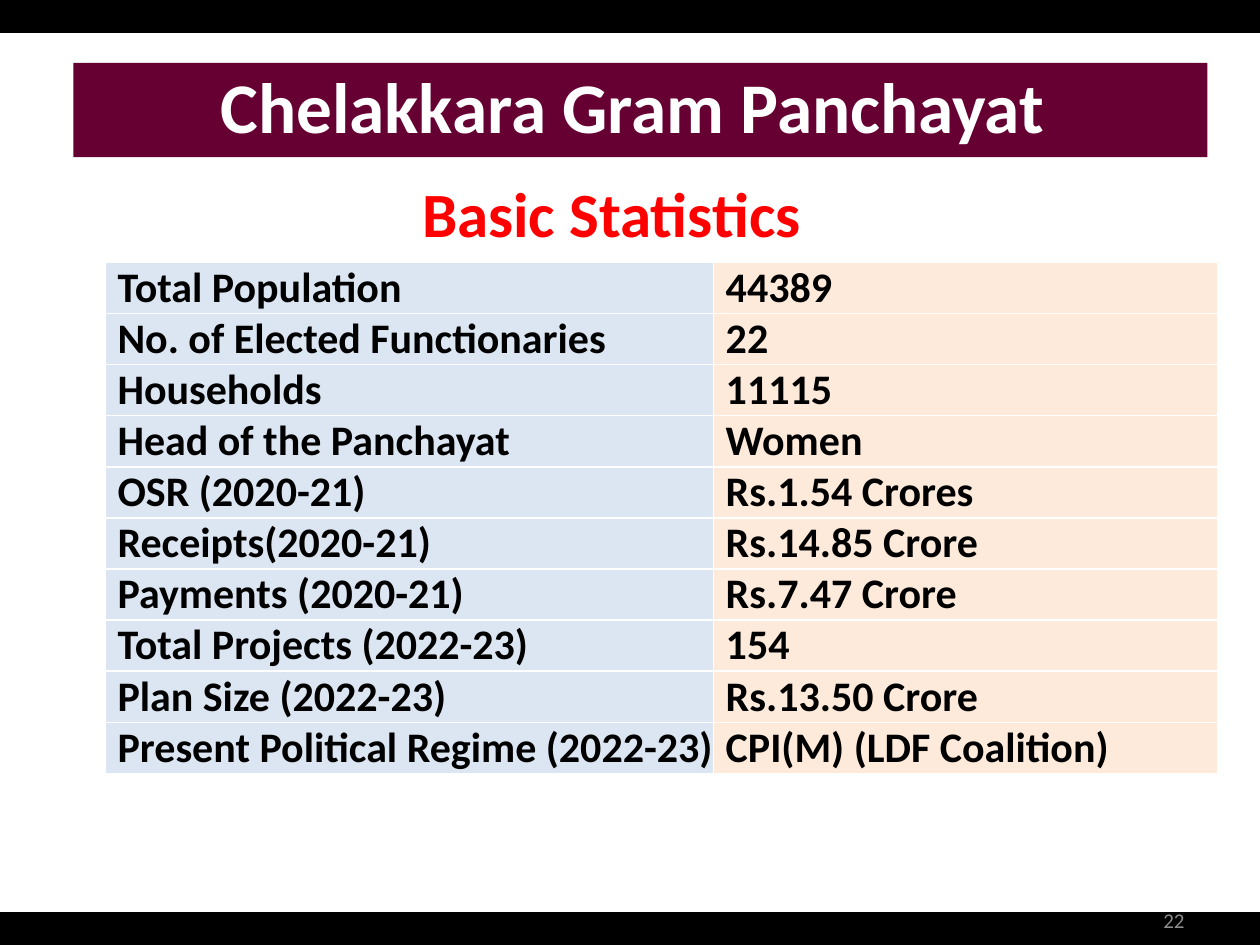
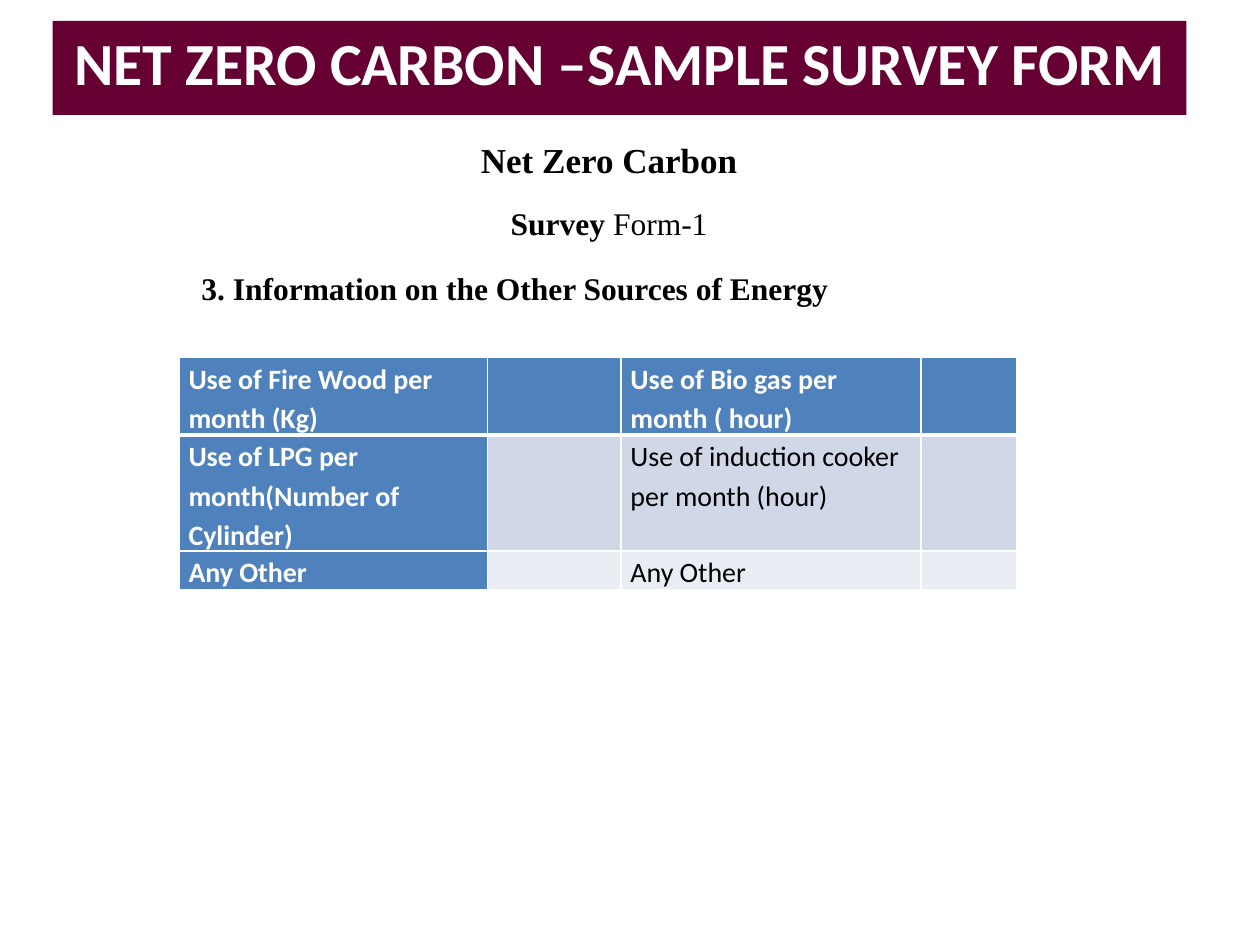
"""Build the panchayat statistics slide and the net zero carbon survey form slide."""
from lxml.etree import SubElement
from pptx import Presentation
from pptx.dml.color import RGBColor
from pptx.enum.shapes import MSO_SHAPE as Preset
from pptx.enum.text import MSO_ANCHOR as Anchor, MSO_AUTO_SIZE as AutoSize, PP_ALIGN as Align
from pptx.oxml.ns import qn
from pptx.util import Cm, Pt

rgb = RGBColor.from_string
MAROON, BLACK, WHITE, RED, GREY = "660033", "000000", "FFFFFF", "FF0000", "8C8C8C"
PALE_BLUE, PALE_ORANGE = "DCE6F2", "FDEADA"
HEADER_BLUE, BAND_DARK, BAND_LIGHT = "4F81BD", "D0D8E8", "E9EDF4"
BODY_FONT, FORM_FONT = "Calibri", "Times New Roman"


def write(para, text, size, color=BLACK, bold=True, font=BODY_FONT, align=Align.LEFT, line=1.0, after=0):
    """Fill one paragraph and set its font and spacing."""
    para.text = text
    para.alignment = align
    para.line_spacing = line
    para.space_after = Pt(after)
    para.font.name = font
    para.font.size = Pt(size)
    para.font.bold = bold
    para.font.color.rgb = rgb(color)


def style_cell(cell, fill, top=1, bottom=1, side=0):
    """Give a table cell its white borders, margins and fill."""
    properties = cell._tc.get_or_add_tcPr()
    for edge, width in (("a:lnL", 1), ("a:lnR", 1), ("a:lnT", top), ("a:lnB", bottom)):
        border = SubElement(properties, qn(edge), w=str(Pt(width)))
        solid = SubElement(border, qn("a:solidFill"))
        SubElement(solid, qn("a:srgbClr"), val=WHITE)
    cell.margin_top = cell.margin_bottom = 0
    cell.margin_left = cell.margin_right = Cm(side)
    cell.fill.solid()
    cell.fill.fore_color.rgb = rgb(fill)


deck = Presentation()
deck.slide_width, deck.slide_height = Cm(25.4), Cm(19.05)
blank = deck.slide_layouts[6]
stats_page = deck.slides.add_slide(blank)
survey_page = deck.slides.add_slide(blank)

titles = [
    (stats_page, 1.48, 1.27, "Chelakkara Gram Panchayat ", 40.7, 0.9),
    (survey_page, 1.06, 0.42, "NET ZERO CARBON –SAMPLE SURVEY FORM", 34.1, 0.8),
]
for page, left, top, text, size, line in titles:
    band = page.shapes.add_shape(Preset.RECTANGLE, Cm(left), Cm(top), Cm(22.86), Cm(1.9))
    band.shadow.inherit = False
    band.fill.solid()
    band.fill.fore_color.rgb = rgb(MAROON)
    band.line.fill.background()
    band.text_frame.word_wrap = True
    band.text_frame.vertical_anchor = Anchor.MIDDLE
    write(band.text_frame.paragraphs[0], text, size, WHITE, align=Align.CENTER, line=line)

for top in (0, 18.42):
    bar = stats_page.shapes.add_shape(Preset.RECTANGLE, 0, Cm(top), deck.slide_width, Cm(0.63))
    bar.shadow.inherit = False
    bar.fill.solid()
    bar.fill.fore_color.rgb = rgb(BLACK)
    bar.line.color.rgb = rgb(BLACK)
    bar.line.width = Pt(2)

subtitle = stats_page.shapes.add_textbox(Cm(8.26), Cm(3.39), Cm(8.26), Cm(1.8)).text_frame
subtitle.word_wrap = False
subtitle.auto_size = AutoSize.SHAPE_TO_FIT_TEXT
write(subtitle.paragraphs[0], "Basic Statistics", 36, RED)

page_number = stats_page.shapes.add_textbox(Cm(18.2), Cm(18.04), Cm(5.93), Cm(1.01)).text_frame
page_number.word_wrap = True
page_number.vertical_anchor = Anchor.MIDDLE
write(page_number.paragraphs[0], "22", 12, GREY, False, align=Align.RIGHT)

statistics = [
    ("Total Population", "44389"),
    ("No. of Elected Functionaries", "22"),
    ("Households", "11115"),
    ("Head of the Panchayat", "Women"),
    ("OSR (2020-21)", "Rs.1.54 Crores"),
    ("Receipts(2020-21)", "Rs.14.85 Crore"),
    ("Payments (2020-21)", "Rs.7.47 Crore"),
    ("Total Projects (2022-23)", "154"),
    ("Plan Size (2022-23)", "Rs.13.50 Crore"),
    ("Present Political Regime (2022-23)", "CPI(M) (LDF Coalition)"),
]
stats_table = stats_page.shapes.add_table(
    len(statistics), 2, Cm(2.12), Cm(5.29), Cm(22.43), Cm(10.3)).table
stats_table.first_row = stats_table.horz_banding = False
stats_table.columns[0].width, stats_table.columns[1].width = Cm(12.26), Cm(10.17)
for row, texts in enumerate(statistics):
    for column, (text, fill) in enumerate(zip(texts, (PALE_BLUE, PALE_ORANGE))):
        cell = stats_table.cell(row, column)
        style_cell(cell, fill)
        cell.margin_left = Cm(0.25)
        write(cell.text_frame.paragraphs[0], text, 24)
        cell.text_frame.paragraphs[0].space_before = Pt(3)

form_name = survey_page.shapes.add_textbox(Cm(5.93), Cm(2.54), Cm(12.7), Cm(2.41)).text_frame
form_name.word_wrap = True
form_name.auto_size = AutoSize.SHAPE_TO_FIT_TEXT
write(form_name.paragraphs[0], "Net Zero Carbon", 20, font=FORM_FONT,
      align=Align.CENTER, line=1.15, after=10)
form_line = form_name.add_paragraph()
write(form_line, "Survey ", 18, font=FORM_FONT, align=Align.CENTER, line=1.15, after=10)
span = form_line.add_run()
span.text = "Form-1"
span.font.bold = False

section = survey_page.shapes.add_textbox(Cm(3.81), Cm(5.18), Cm(13.28), Cm(1.09)).text_frame
section.word_wrap = False
section.auto_size = AutoSize.SHAPE_TO_FIT_TEXT
write(section.paragraphs[0], "3. Information on the Other Sources of Energy", 18,
      font=FORM_FONT, line=1.15, after=10)

questions = [
    ("Use of Fire Wood per month (Kg)", "", "Use of Bio gas per month ( hour)", ""),
    ("Use of LPG per month(Number of Cylinder)", "", "Use of induction cooker per month (hour)", ""),
    ("Any Other", "", "Any Other", ""),
]
row_fills = (HEADER_BLUE, BAND_DARK, BAND_LIGHT)
edge_widths = (1, 3, 1, 1)
survey_table = survey_page.shapes.add_table(3, 4, Cm(3.61), Cm(7.21), Cm(16.89), Cm(4.66)).table
survey_table.first_row = survey_table.horz_banding = False
for column, width in zip(survey_table.columns, (6.22, 2.69, 6.05, 1.93)):
    column.width = Cm(width)
for row, height in zip(survey_table.rows, (1.56, 2.32, 0.78)):
    row.height = Cm(height)
for row, texts in enumerate(questions):
    for column, text in enumerate(texts):
        is_header = row == 0 or column == 0
        cell = survey_table.cell(row, column)
        style_cell(cell, HEADER_BLUE if is_header else row_fills[row],
                   edge_widths[row], edge_widths[row + 1], side=0.19)
        write(cell.text_frame.paragraphs[0], text, 16, WHITE if is_header else BLACK,
              is_header, line=1.15)

deck.save("out.pptx")
